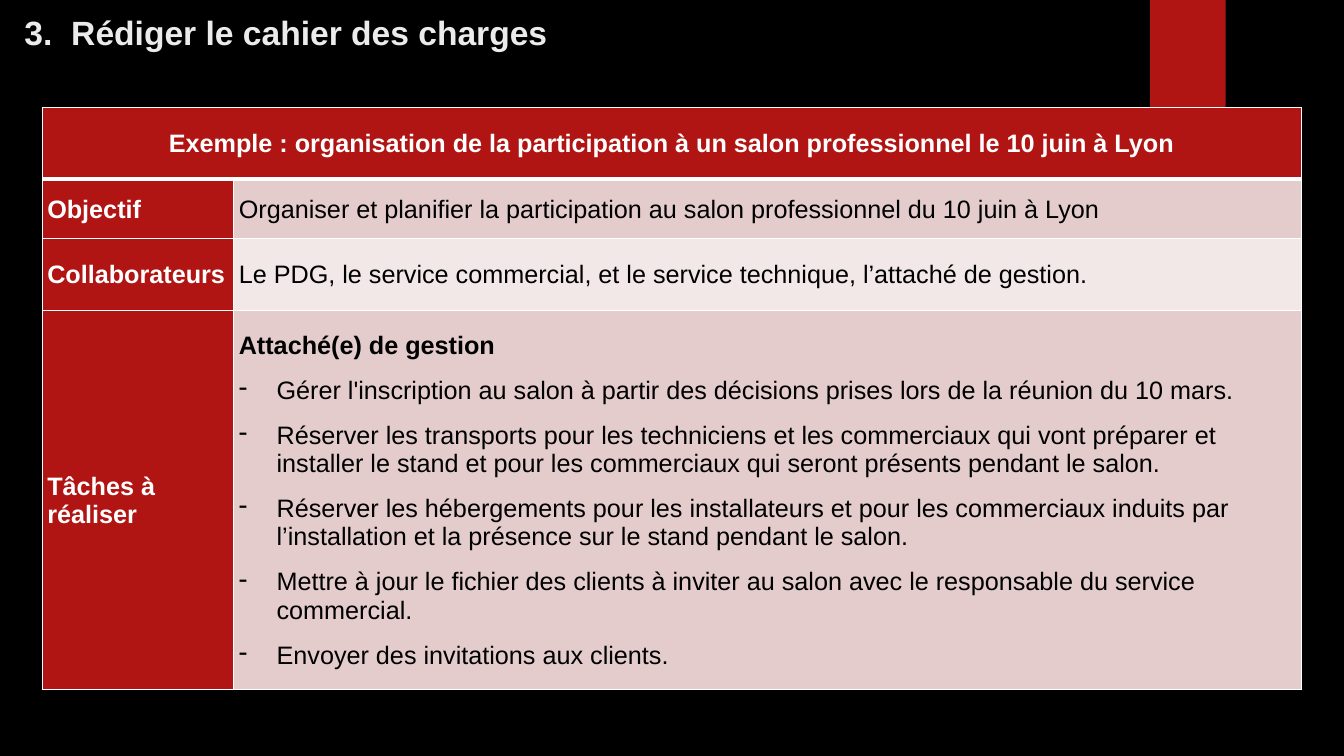
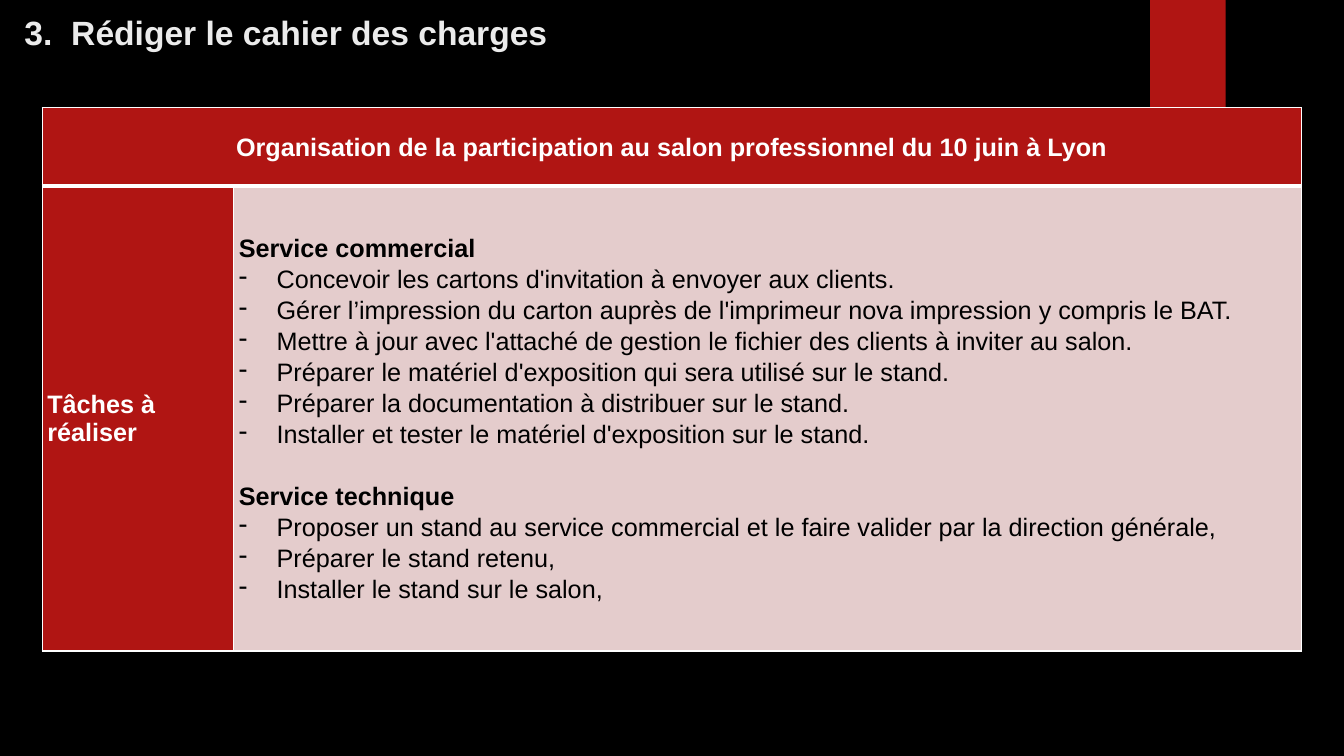
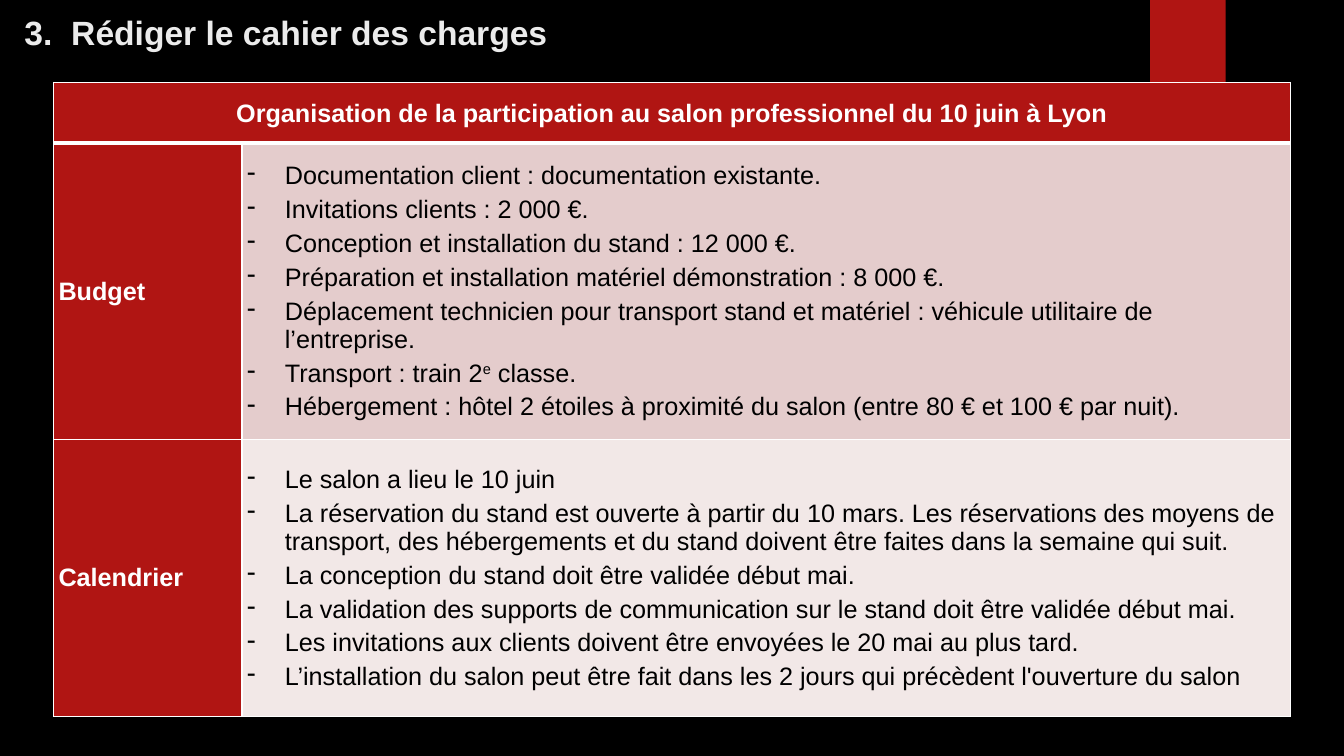
from dataclasses import dataclass

from lxml.etree import SubElement
from pptx import Presentation
from pptx.dml.color import RGBColor
from pptx.enum.shapes import MSO_SHAPE
from pptx.enum.text import MSO_ANCHOR, PP_ALIGN
from pptx.oxml.ns import qn
from pptx.util import Pt

BLACK = RGBColor(0x00, 0x00, 0x00)
WHITE = RGBColor(0xFF, 0xFF, 0xFF)
PALE = RGBColor(0xEB, 0xEB, 0xEB)
RED = RGBColor(0xB0, 0x15, 0x13)
ROSE = RGBColor(0xE4, 0xCC, 0xCC)
BLUSH = RGBColor(0xF2, 0xE8, 0xE7)
FONT = "Arial"
TITLE = "3.\tRédiger le cahier des charges"
EVENT = "Organisation de la participation au salon professionnel du 10 juin à Lyon"
TASKS = "Tâches à réaliser"


@dataclass
class Para:
    text: str
    gap: float = 0
    bold: bool = False
    dash: bool = False
    color: RGBColor = BLACK
    align: PP_ALIGN = PP_ALIGN.LEFT


@dataclass
class Row:
    height: float
    label: str
    paras: list[Para]


@dataclass
class Page:
    left: float
    top: float
    widths: tuple[float, float]
    head: str
    depth: float
    rows: list[Row]


def dashes(gap: float, *texts: str) -> list[Para]:
    return [Para(text, gap, dash=True) for text in texts]


def style(run, size: float, color: RGBColor, bold: bool) -> None:
    font = run.font
    font.name, font.size, font.bold = FONT, Pt(size), bold
    font.color.rgb = color


def hang(line, width: float) -> None:
    props = line._p.get_or_add_pPr()
    props.set("marL", str(Pt(width)))
    props.set("indent", str(-Pt(width)))


def edge(cell, side: str, width: float) -> None:
    props = cell._tc.get_or_add_tcPr()
    line = SubElement(props, qn(f"a:ln{side}"), w=str(Pt(width)))
    fill = SubElement(line, qn("a:solidFill"))
    SubElement(fill, qn("a:srgbClr"), val=str(WHITE))


def paint(cell, fill: RGBColor, top: float, base: float) -> None:
    for side, width in zip("LRTB", (1, 1, top, base)):
        edge(cell, side, width)
    cell.fill.solid()
    cell.fill.fore_color.rgb = fill
    cell.vertical_anchor = MSO_ANCHOR.MIDDLE
    cell.margin_left = cell.margin_right = Pt(3.6)
    cell.margin_top, cell.margin_bottom = Pt(0.7), 0


def write(cell, paras: list[Para]) -> None:
    frame = cell.text_frame
    for rank, para in enumerate(paras):
        line = frame.add_paragraph() if rank else frame.paragraphs[0]
        start, *rest = para.text.split("|")
        line.text = start
        for part in rest:
            line.add_run().text = part
        line.alignment = para.align
        line.space_before = Pt(para.gap if rank else 0)
        if para.dash:
            hang(line, 27)
            SubElement(line._p.get_or_add_pPr(), qn("a:buChar"), char="-")
        for place, run in enumerate(line.runs):
            style(run, 18, para.color, para.bold)
            if place % 2:
                run.font._element.set("baseline", "30000")


def add_title(slide) -> None:
    title = slide.shapes.title
    title.left, title.top = Pt(3.6), Pt(5)
    title.width, title.height = Pt(711), Pt(36)
    frame = title.text_frame
    frame.text = TITLE
    frame.word_wrap = True
    frame.vertical_anchor = MSO_ANCHOR.BOTTOM
    frame.margin_left = Pt(13.9)
    line = frame.paragraphs[0]
    line.alignment = PP_ALIGN.LEFT
    hang(line, 33.4)
    style(line.runs[0], 24, PALE, True)


def add_grid(slide, page: Page) -> None:
    highs = [page.depth] + [row.height for row in page.rows]
    grid = slide.shapes.add_table(
        len(highs), 2, Pt(page.left), Pt(page.top),
        Pt(sum(page.widths)), Pt(sum(highs))).table
    for col, width in zip(grid.columns, page.widths):
        col.width = Pt(width)
    for row, high in zip(grid.rows, highs):
        row.height = Pt(high)
    for col in range(2):
        paint(grid.cell(0, col), RED, 1, 3)
    grid.cell(0, 0).merge(grid.cell(0, 1))
    write(grid.cell(0, 0), [Para(page.head, bold=True, color=WHITE, align=PP_ALIGN.CENTER)])
    for rank, row in enumerate(page.rows, 1):
        label, body = grid.cell(rank, 0), grid.cell(rank, 1)
        top = 3 if rank == 1 else 1
        paint(label, RED, top, 1)
        paint(body, ROSE if rank % 2 else BLUSH, top, 1)
        write(label, [Para(row.label, bold=True, color=WHITE)])
        write(body, row.paras)


def add_band(slide, layout) -> None:
    band = slide.shapes.add_shape(MSO_SHAPE.RECTANGLE, Pt(821.5), 0, Pt(54), Pt(90))
    band.shadow.inherit = False
    band.fill.solid()
    band.fill.fore_color.rgb = RED
    band.line.fill.background()
    layout.shapes.element.append(band.element)


PAGES = [
    Page(30.2, 77, (136.8, 762.5),
         "Exemple : organisation de la participation à un salon professionnel le 10 juin à Lyon",
         51, [
             Row(42.5, "Objectif", [Para(
                 "Organiser et planifier la participation au salon professionnel du 10 juin à Lyon")]),
             Row(51.5, "Collaborateurs", [Para(
                 "Le PDG, le service commercial, et le service technique, l’attaché de gestion.")]),
             Row(270.5, TASKS, [Para("Attaché(e) de gestion", bold=True)] + dashes(
                 12,
                 "Gérer l'inscription au salon à partir des décisions prises lors de la réunion du 10 mars.",
                 "Réserver les transports pour les techniciens et les commerciaux qui vont préparer et "
                 "installer le stand et pour les commerciaux qui seront présents pendant le salon.",
                 "Réserver les hébergements pour les installateurs et pour les commerciaux induits par "
                 "l’installation et la présence sur le stand pendant le salon.",
                 "Mettre à jour le fichier des clients à inviter au salon avec le responsable du service "
                 "commercial.",
                 "Envoyer des invitations aux clients.")),
         ]),
    Page(30.2, 77, (136.8, 762.5), EVENT, 56, [
        Row(332, TASKS, [
            Para("Service commercial", bold=True),
            *dashes(
                2,
                "Concevoir les cartons d'invitation à envoyer aux clients.",
                "Gérer l’impression du carton auprès de l'imprimeur nova impression y compris le BAT.",
                "Mettre à jour avec l'attaché de gestion le fichier des clients à inviter au salon.",
                "Préparer le matériel d'exposition qui sera utilisé sur le stand.",
                "Préparer la documentation à distribuer sur le stand.",
                "Installer et tester le matériel d'exposition sur le stand."),
            Para("Service technique", 24, bold=True),
            *dashes(
                2,
                "Proposer un stand au service commercial et le faire valider par la direction générale,",
                "Préparer le stand retenu,",
                "Installer le stand sur le salon,"),
        ]),
    ]),
    Page(38.2, 59, (134.7, 748.8), EVENT, 43.2, [
        Row(211.5, "Budget", dashes(
            4,
            "Documentation client : documentation existante.",
            "Invitations clients : 2 000 €.",
            "Conception et installation du stand : 12 000 €.",
            "Préparation et installation matériel démonstration : 8 000 €.",
            "Déplacement technicien pour transport stand et matériel : véhicule utilitaire de "
            "l’entreprise.",
            "Transport : train 2|e| classe.",
            "Hébergement : hôtel 2 étoiles à proximité du salon (entre 80 € et 100 € par nuit).")),
        Row(198, "Calendrier", dashes(
            4,
            "Le salon a lieu le 10 juin",
            "La réservation du stand est ouverte à partir du 10 mars. Les réservations des moyens de "
            "transport, des hébergements et du stand doivent être faites dans la semaine qui suit.",
            "La conception du stand doit être validée début mai.",
            "La validation des supports de communication sur le stand doit être validée début mai.",
            "Les invitations aux clients doivent être envoyées le 20 mai au plus tard.",
            "L’installation du salon peut être fait dans les 2 jours qui précèdent l'ouverture du salon")),
    ]),
]


def main() -> None:
    deck = Presentation()
    deck.slide_width, deck.slide_height = Pt(960), Pt(540)
    back = deck.slide_master.background.fill
    back.solid()
    back.fore_color.rgb = BLACK
    layout = deck.slide_layouts.get_by_name("Title Only")
    for rank, page in enumerate(PAGES):
        slide = deck.slides.add_slide(layout)
        if not rank:
            add_band(slide, layout)
        add_title(slide)
        add_grid(slide, page)
    deck.save("out.pptx")


if __name__ == "__main__":
    main()
